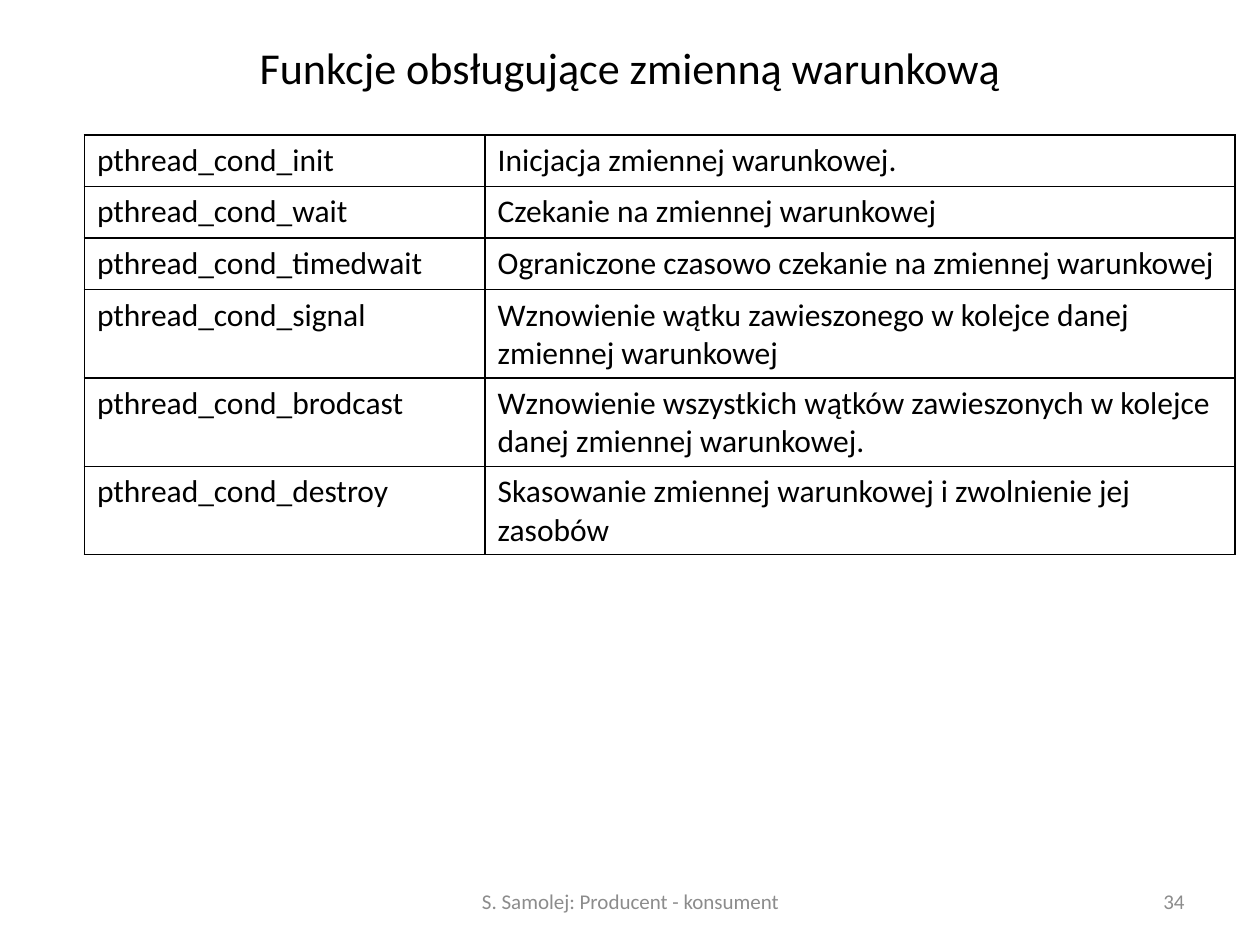
import pptx
import pptx.dml.color
import pptx.enum.text
import pptx.oxml
import pptx.oxml.ns
import pptx.util
from lxml import etree

COLORS = {"text": "000000", "footer": "8C8C8C", "border": "000000"}
FONT = "Calibri"
ALIGN = pptx.enum.text.PP_ALIGN
ANCHOR = pptx.enum.text.MSO_ANCHOR

presentation = pptx.Presentation()
presentation.slide_width = pptx.util.Inches(10)
presentation.slide_height = pptx.util.Inches(7.5)
slide = presentation.slides.add_slide(presentation.slide_layouts[6])


def write_text(frame, text, size=18, color="text", align=ALIGN.LEFT, anchor=ANCHOR.TOP):
    frame.word_wrap = True
    frame.vertical_anchor = anchor
    paragraph = frame.paragraphs[0]
    paragraph.alignment = align
    run = paragraph.add_run()
    run.text = text
    run.font.name = FONT
    run.font.size = pptx.util.Pt(size)
    run.font.color.rgb = pptx.dml.color.RGBColor.from_string(COLORS[color])


def add_borders(cell, color, width):
    properties = cell._tc.get_or_add_tcPr()
    # Border lines must come before the cell's fill
    for position, side in enumerate(("lnL", "lnR", "lnT", "lnB")):
        line = etree.Element(pptx.oxml.ns.qn(f"a:{side}"), w=str(pptx.util.Pt(width)))
        fill = etree.SubElement(line, pptx.oxml.ns.qn("a:solidFill"))
        etree.SubElement(fill, pptx.oxml.ns.qn("a:srgbClr"), val=color)
        properties.insert(position, line)


# Title, footer and slide number
texts = [
    ("Funkcje obsługujące zmienną warunkową", (0.5, 0.3, 9, 0.46), 25.2, "text", ALIGN.CENTER),
    ("S. Samolej: Producent - konsument", (3.42, 6.95, 3.17, 0.4), 12, "footer", ALIGN.CENTER),
    ("34", (7.17, 6.95, 2.33, 0.4), 12, "footer", ALIGN.RIGHT),
]
for text, box, size, color, align in texts:
    shape = slide.shapes.add_textbox(*map(pptx.util.Inches, box))
    write_text(shape.text_frame, text, size=size, color=color, align=align, anchor=ANCHOR.MIDDLE)

# Table of functions; rows with two lines grow to fit
functions = [
    ("pthread_cond_init", "Inicjacja zmiennej warunkowej."),
    ("pthread_cond_wait", "Czekanie na zmiennej warunkowej"),
    ("pthread_cond_timedwait", "Ograniczone czasowo czekanie na zmiennej warunkowej"),
    ("pthread_cond_signal", "Wznowienie wątku zawieszonego w kolejce danej zmiennej warunkowej"),
    ("pthread_cond_brodcast",
     "Wznowienie wszystkich wątków zawieszonych w kolejce danej zmiennej warunkowej."),
    ("pthread_cond_destroy", "Skasowanie zmiennej warunkowej i zwolnienie jej zasobów"),
]
column_widths = (3.18, 5.95)
row_height = 0.41
table_box = (0.67, 1.07, sum(column_widths), row_height * len(functions))
table = slide.shapes.add_table(
    len(functions), len(column_widths), *map(pptx.util.Inches, table_box)
).table
table.first_row = False
table.horz_banding = False
for column, width in zip(table.columns, column_widths):
    column.width = pptx.util.Inches(width)
for row, texts_in_row in zip(table.rows, functions):
    row.height = pptx.util.Inches(row_height)
    for cell, text in zip(row.cells, texts_in_row):
        cell.fill.background()
        write_text(cell.text_frame, text)
        add_borders(cell, COLORS["border"], 1)

presentation.save("out.pptx")
